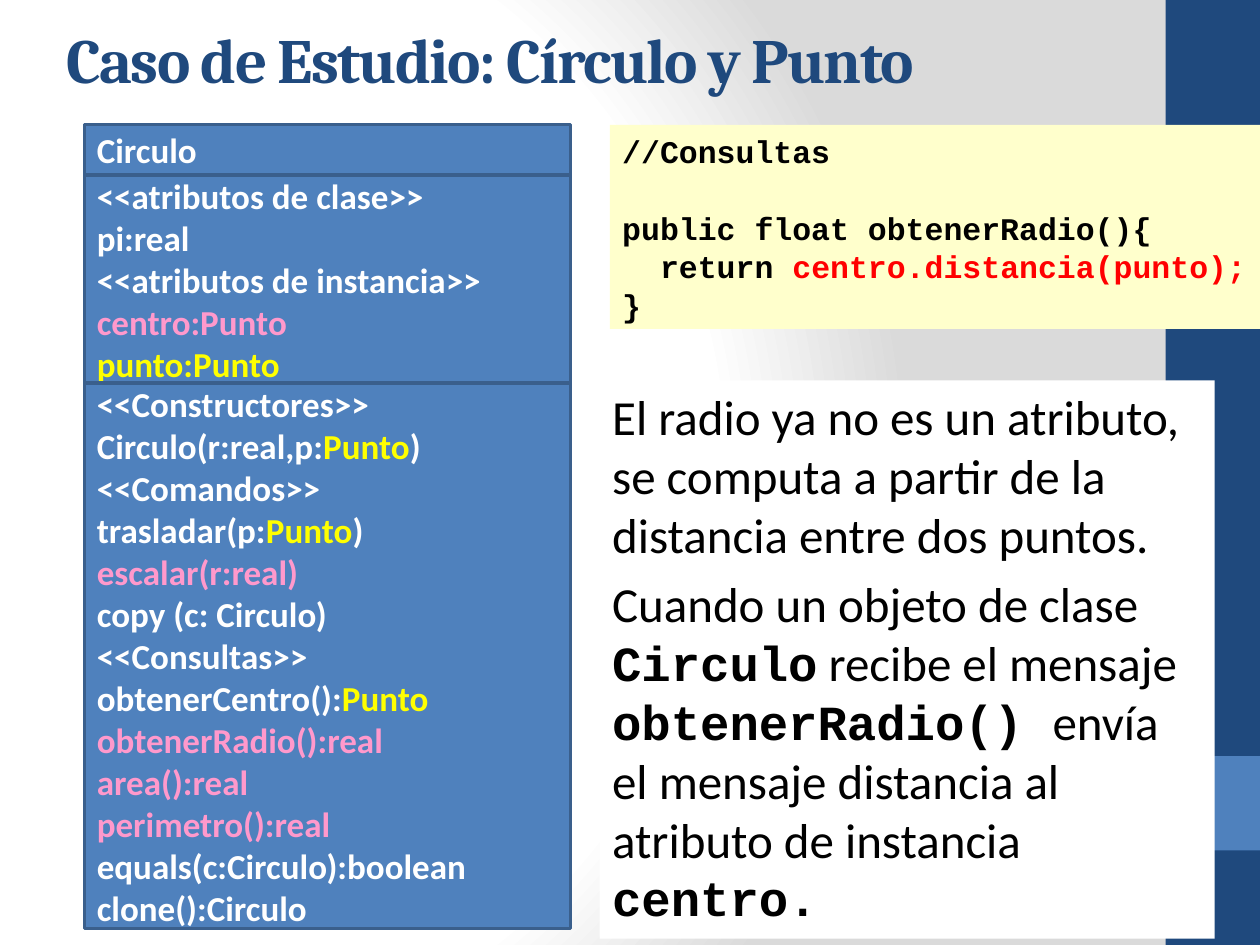
from pptx import Presentation
from pptx.dml.color import RGBColor
from pptx.enum.shapes import MSO_SHAPE
from pptx.enum.text import MSO_ANCHOR, MSO_AUTO_SIZE, PP_ALIGN
from pptx.oxml import parse_xml
from pptx.oxml.ns import nsdecls
from pptx.util import Inches, Pt

NAVY = RGBColor(0x1F, 0x49, 0x7D)
BLUE = RGBColor(0x4F, 0x81, 0xBD)
OUTLINE = RGBColor(0x3A, 0x5F, 0x8C)
CREAM = RGBColor(0xFF, 0xFF, 0xCC)
WHITE = RGBColor(0xFF, 0xFF, 0xFF)
BLACK = RGBColor(0x00, 0x00, 0x00)
PINK = RGBColor(0xFF, 0x99, 0xCC)
YELLOW = RGBColor(0xFF, 0xFF, 0x00)
RED = RGBColor(0xFF, 0x00, 0x00)

BACKGROUND = f"""<p:bg {nsdecls('p', 'a')}><p:bgPr>
<a:gradFill rotWithShape="1"><a:gsLst>
<a:gs pos="0"><a:srgbClr val="FFFFFF"/></a:gs>
<a:gs pos="75000"><a:srgbClr val="FFFFFF"/></a:gs>
<a:gs pos="100000"><a:srgbClr val="DADADA"/></a:gs>
</a:gsLst><a:path path="circle">
<a:fillToRect l="20000" t="50000" r="100000" b="50000"/>
</a:path></a:gradFill><a:effectLst/></p:bgPr></p:bg>"""

presentation = Presentation()
presentation.slide_width, presentation.slide_height = Inches(10), Inches(7.5)
slide = presentation.slides.add_slide(presentation.slide_layouts[6])
slide._element.cSld.insert(0, parse_xml(BACKGROUND))


def add_box(left, top, width, height, fill, line=None):
    shape = slide.shapes.add_shape(
        MSO_SHAPE.RECTANGLE, Inches(left), Inches(top), Inches(width), Inches(height))
    shape.shadow.inherit = False
    shape.fill.solid()
    shape.fill.fore_color.rgb = fill
    if line is None:
        shape.line.fill.background()
    else:
        shape.line.color.rgb = line
        shape.line.width = Pt(2)
    return shape


def write(shape, paragraphs, base, anchor=MSO_ANCHOR.TOP, **spacing):
    """Fill a shape with paragraphs, each a list of (text, format changes to base)."""
    frame = shape.text_frame
    frame.word_wrap = True
    frame.vertical_anchor = anchor
    for index, runs in enumerate(paragraphs):
        paragraph = frame.paragraphs[0] if index == 0 else frame.add_paragraph()
        paragraph.alignment = PP_ALIGN.LEFT
        for name, value in spacing.items():
            setattr(paragraph, name, value)
        for text, changes in runs:
            run = paragraph.add_run()
            run.text = text
            values = {**base, **changes}
            run.font.color.rgb = values.pop("color")
            for name, value in values.items():
                setattr(run.font, name, value)
    return frame


# Side band
add_box(9.25, 0, 0.75, 7.5, NAVY)
add_box(9.25, 6, 0.75, 0.75, BLUE)

# Title
title = slide.shapes.add_textbox(Inches(0.43), Inches(0.05), Inches(8.25), Inches(0.76))
title_format = {"name": "Cambria", "size": Pt(36), "bold": True, "color": NAVY}
title_frame = write(title, [[("Caso de Estudio: Círculo y Punto", {})]],
                    title_format, MSO_ANCHOR.BOTTOM)
title_frame.paragraphs[0].runs[0].font._element.set("spc", "-100")

# Class diagram
pink, yellow = {"color": PINK}, {"color": YELLOW}
class_name = [[("Circulo", {})]]
attributes = [
    [("<<atributos de clase>>", {})],
    [("pi:real", {})],
    [("<<atributos de instancia>>", {})],
    [("centro:Punto", pink)],
    [("punto:Punto", yellow)],
]
services = [
    [("<<Constructores>>", {})],
    [("Circulo(r:real,p:", {}), ("Punto", yellow), (")", {})],
    [("<<Comandos>>", {})],
    [("trasladar(p:", {}), ("Punto", yellow), (")", {})],
    [("escalar(r:real)", pink)],
    [("copy (c: Circulo)", {})],
    [("<<Consultas>>", {})],
    [("obtenerCentro():", {}), ("Punto", yellow)],
    [("obtenerRadio():real", pink)],
    [("area():real", pink)],
    [("perimetro():real", pink)],
    [("equals(c:Circulo):boolean", {})],
    [("clone():Circulo", {})],
]
class_format = {"name": "Calibri", "size": Pt(20), "bold": True, "color": WHITE}
top = 0.99
for section, height in ((class_name, 0.4), (attributes, 1.65), (services, 4.33)):
    box = add_box(0.67, top, 3.86, height, BLUE, OUTLINE)
    write(box, section, class_format, MSO_ANCHOR.MIDDLE)
    top += height

# Code
code = [
    [("//Consultas", {})],
    [("public float obtenerRadio(){", {})],
    [("  return ", {}), ("centro.distancia(punto);", {"color": RED})],
    [("}", {})],
]
code_format = {"name": "Courier New", "size": Pt(18), "bold": True, "color": BLACK}
code_frame = write(add_box(4.84, 0.99, 5.16, 1.62, CREAM), code, code_format,
                   line_spacing=Pt(22))
code_frame.paragraphs[1].space_before = Pt(22)

# Explanation
mono = {"name": "Courier New", "bold": True}
explanation = [
    [("El radio ya no es un atributo, se computa a partir de la distancia "
      "entre dos puntos.", {})],
    [("Cuando un objeto de clase ", {}), ("Circulo", mono),
     (" recibe el mensaje ", {}), ("obtenerRadio() ", mono),
     ("envía el mensaje distancia al atributo de instancia ", {}), ("centro.", mono)],
]
explanation_format = {"name": "Calibri", "size": Pt(28), "bold": False, "color": BLACK}
explanation_frame = write(add_box(4.76, 3.02, 4.88, 4.43, WHITE), explanation,
                          explanation_format, space_before=Pt(6))

for frame in (code_frame, explanation_frame):
    frame.auto_size = MSO_AUTO_SIZE.SHAPE_TO_FIT_TEXT

presentation.save("out.pptx")
